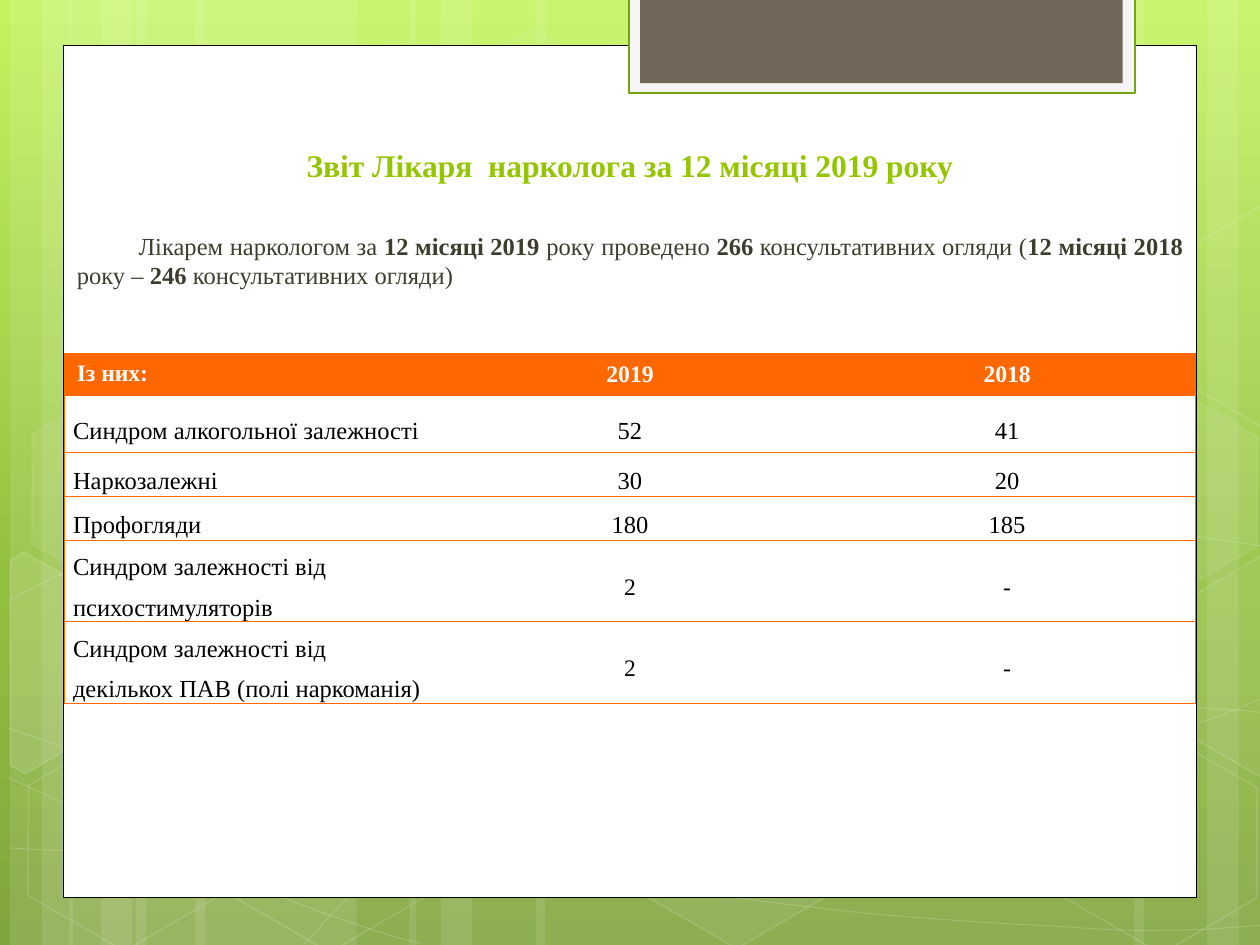
from copy import deepcopy
from math import cos, radians, sin

from lxml import etree
from pptx import Presentation
from pptx.dml.color import RGBColor
from pptx.enum import shapes, text
from pptx.oxml import ns
from pptx.util import Inches, Pt

FONT = "Times New Roman"
COLORS = {
    "white": "FFFFFF", "black": "000000", "title": "94C600", "body": "3E3D2D",
    "orange": "FF6700", "frame": "F5F5F5", "frame_line": "74A510", "tab": "71685A",
    "light_green": "C3F35F", "green": "93BF3F", "dark_green": "81A53E",
}
BACKDROP = [(0, "light_green"), (0.62, "green"), (1, "dark_green")]
TILT = 30

# left, width, rotation of the translucent stripes
STRIPES = [(1.08, 1.75, 0), (0.08, 0.5, 0), (0.33, 0.83, 0), (1.55, 1.75, 0), (0.55, 0.5, 0),
           (0.8, 0.83, 0), (7.33, 1.75, 180), (9.58, 0.5, 180), (9, 0.83, 180),
           (4.25, 3.08, 0), (3.25, 0.5, 0), (3.5, 0.83, 0)]

# start point, then Bezier segments of two control points and an end point
WAVES = [
    [(0.07, 6.73), (0.61, 6.76), (1.15, 6.79), (1.9, 6.78), (2.65, 6.77), (3.58, 6.75),
     (4.58, 6.65), (5.58, 6.55), (7, 6.36), (7.92, 6.17), (8.83, 5.98), (9.77, 5.68),
     (10.07, 5.51)],
    [(0.07, 4.77), (0.36, 4.61), (0.65, 4.46), (1.21, 4.31), (1.78, 4.16), (2.59, 3.94),
     (3.47, 3.87), (4.36, 3.8), (5.44, 3.79), (6.54, 3.87), (7.64, 3.95), (9.47, 4.26),
     (10.07, 4.34)],
    [(0.06, 6.17), (1.27, 6.72), (2.47, 7.27), (3.34, 7.49)],
    [(0.07, 5.78), (0.38, 5.89), (0.7, 6), (1.28, 6.16), (1.86, 6.31), (2.73, 6.56),
     (3.57, 6.73), (4.4, 6.9), (5.45, 7.08), (6.28, 7.18), (7.11, 7.29), (8, 7.33),
     (8.53, 7.36), (9.05, 7.4), (9.19, 7.38), (9.45, 7.38), (9.71, 7.37), (9.89, 7.35),
     (10.07, 7.34)],
    [(2.42, 7.49), (2.6, 7.29), (2.78, 7.09), (3.02, 6.91), (3.26, 6.73), (3.6, 6.53),
     (3.88, 6.39), (4.16, 6.25), (4.33, 6.19), (4.7, 6.09), (5.06, 5.99), (5.73, 5.85),
     (6.08, 5.78), (6.44, 5.71), (6.49, 5.71), (6.8, 5.69), (7.11, 5.66), (7.6, 5.63),
     (7.94, 5.62), (8.29, 5.61), (8.86, 5.62), (8.86, 5.62), (9.08, 5.62), (9.31, 5.62),
     (9.53, 5.62), (9.71, 5.63), (9.88, 5.64), (9.97, 5.65), (10.06, 5.66), (10.03, 5.65),
     (10.06, 5.66)],
]

# left, top, fill opacity, line opacity (percent)
HEXAGONS = [(3.34, 0.36, 4, 8), (4.97, 5.89, 6, 12), (0.11, 5.91, 0, 12), (0.14, 3.12, 7, 8),
            (1.74, 5.92, 0, 12), (7.53, 4.53, 10, 12), (8.34, 5.93, 0, 12), (8.34, 3.14, 7, 8)]

# hexagons cut off by the slide edge: fill opacity, centre, tilted outline
CUT_HEXAGONS = [
    (10, (0.36, 5.35),
     [(0.08, 4.45), (0.19, 4.38), (0.96, 4.82), (0.95, 5.7), (0.2, 6.14), (0.08, 6.07)]),
    (4, (9.85, 5.2),
     [(9.26, 4.85), (10.01, 4.41), (10.09, 4.46), (10.09, 6.13), (10.02, 6.17), (9.26, 5.73)]),
    (0, (9.85, 2.41),
     [(9.26, 2.07), (10.01, 1.63), (10.1, 1.68), (10.09, 3.35), (10.02, 3.39), (9.26, 2.95)]),
]

TITLE = "Звіт Лікаря  нарколога за 12 місяці 2019 року"
SUMMARY = ["Лікарем наркологом за ", "12 місяці 2019 ", "року проведено ", "266",
           " консультативних огляди (", "12 місяці 2018", " року – ", "246 ",
           "консультативних огляди)"]
CASES = [
    ("Із них:", "2019", "2018"),
    ("Синдром алкогольної залежності", "52", "41"),
    ("Наркозалежні", "30", "20"),
    ("Профогляди", "180", "185"),
    ("Синдром залежності від психостимуляторів", "2", "-"),
    ("Синдром залежності від декількох ПАВ (полі наркоманія)", "2", "-"),
]
ROW_HEIGHTS = [0.33, 0.45, 0.35, 0.35, 0.35, 0.35]


def rgb(name):
    return RGBColor.from_string(COLORS[name])


def set_opacity(fill_parent, percent):
    if percent < 100:
        color = fill_parent.find(ns.qn("a:solidFill")).find(ns.qn("a:srgbClr"))
        etree.SubElement(color, ns.qn("a:alpha")).set("val", str(percent * 1000))


def paint(shape, fill=None, line=None, width=1, fill_opacity=100, line_opacity=100):
    """Fill and outline a shape; None leaves that part empty."""
    shape.shadow.inherit = False
    properties = shape._element.spPr
    if fill and fill_opacity:
        shape.fill.solid()
        shape.fill.fore_color.rgb = rgb(fill)
        set_opacity(properties, fill_opacity)
    else:
        shape.fill.background()
    if line:
        shape.line.color.rgb = rgb(line)
        shape.line.width = Pt(width)
        set_opacity(properties.find(ns.qn("a:ln")), line_opacity)
    else:
        shape.line.fill.background()


def add_preset(slide, box, preset=shapes.MSO_SHAPE.RECTANGLE, rotation=0, **look):
    shape = slide.shapes.add_shape(preset, *map(Inches, box))
    shape.rotation = rotation
    paint(shape, **look)
    return shape


def add_outline(slide, points, close, **look):
    corners = [(Inches(x), Inches(y)) for x, y in points]
    builder = slide.shapes.build_freeform(*corners[0])
    builder.add_line_segments(corners[1:], close=close)
    shape = builder.convert_to_shape()
    paint(shape, **look)
    return shape


def add_wave(slide, knots):
    """Draw the knots as an outline, then join each three segments into a Bezier curve."""
    wave = add_outline(slide, knots, False, line="white", width=0.5, line_opacity=20)
    outline = wave._element.find(".//" + ns.qn("a:path"))
    segments = outline.findall(ns.qn("a:lnTo"))
    for i in range(0, len(segments), 3):
        curve = etree.SubElement(outline, ns.qn("a:cubicBezTo"))
        for segment in segments[i:i + 3]:
            curve.append(segment[0])
            outline.remove(segment)


def untilt(point, center):
    dx, dy = point[0] - center[0], point[1] - center[1]
    c, s = cos(radians(TILT)), sin(radians(TILT))
    return center[0] + dx * c + dy * s, center[1] - dx * s + dy * c


def add_backdrop(slide, height):
    for left, width, rotation in STRIPES:
        add_preset(slide, (left, 0, width, height), rotation=rotation,
                   fill="white", fill_opacity=10)
    for knots in WAVES:
        add_wave(slide, knots)
    for left, top, fill_opacity, line_opacity in HEXAGONS:
        hexagon = add_preset(slide, (left, top, 1.75, 1.52), shapes.MSO_SHAPE.HEXAGON, TILT,
                             fill="white", line="white",
                             fill_opacity=fill_opacity, line_opacity=line_opacity)
        hexagon.adjustments[0] = 0.285
    for fill_opacity, center, points in CUT_HEXAGONS:
        upright = [untilt(point, center) for point in points]
        add_outline(slide, upright, True, fill="white", line="white",
                    fill_opacity=fill_opacity, line_opacity=12).rotation = TILT


def add_panel(slide, box):
    """White page with a framed tab hanging over its top edge."""
    left, top, _, _ = box
    add_preset(slide, box, fill="white", line="black", width=0.5)
    add_preset(slide, (left + 4.49, top - 0.38, 4.02, 0.76), fill="frame", line="frame_line",
               width=1.25)
    add_preset(slide, (left + 4.58, top - 0.38, 3.83, 0.68), fill="tab")


def set_background(master):
    fill = master.background.fill
    fill.gradient()
    fill.gradient_angle = 270
    stop_list = master._element.find(".//" + ns.qn("a:gsLst"))
    stop_list.append(deepcopy(stop_list[-1]))
    for stop, (position, color) in zip(fill.gradient_stops, BACKDROP):
        stop.position = position
        stop.color.rgb = rgb(color)


def move_to_master(slide, master):
    """Make every shape but the placeholders part of the master, behind its own parts."""
    decorations = [shape for shape in slide.shapes if not shape.is_placeholder]
    for i, shape in enumerate(decorations):
        shape._element.nvSpPr.cNvPr.set("id", str(100 + i))
        master.shapes._spTree.insert(2 + i, shape._element)


def format_runs(paragraph, size, color, bold=False):
    for run in paragraph.runs:
        run.font.name, run.font.size, run.font.bold = FONT, Pt(size), bold
        run.font.color.rgb = rgb(color)


def place(placeholder, box, anchor):
    placeholder.left, placeholder.top, placeholder.width, placeholder.height = map(Inches, box)
    frame = placeholder.text_frame
    frame.vertical_anchor = anchor
    frame.auto_size = text.MSO_AUTO_SIZE.NONE
    return frame.paragraphs[0]


def add_title(slide, box):
    paragraph = place(slide.shapes.title, box, text.MSO_ANCHOR.BOTTOM)
    paragraph.text = TITLE
    paragraph.alignment = text.PP_ALIGN.CENTER
    format_runs(paragraph, 18, "title", True)


def add_summary(slide, box):
    paragraph = place(slide.placeholders[1], box, text.MSO_ANCHOR.TOP)
    paragraph.alignment = text.PP_ALIGN.JUSTIFY
    paragraph.space_before = Pt(0)
    properties = paragraph._p.get_or_add_pPr()
    properties.set("marL", "0")
    properties.set("indent", str(Inches(0.49)))
    etree.SubElement(properties, ns.qn("a:buNone"))
    for part in SUMMARY:
        paragraph.add_run().text = part
    format_runs(paragraph, 14, "body")
    for run in paragraph.runs[1::2]:
        run.font.bold = True


def set_borders(cell, sides):
    """Orange lines on the given sides (letters of LRTB), none on the others."""
    for side in "LRTB":
        line = etree.SubElement(cell._tc.get_or_add_tcPr(), ns.qn("a:ln" + side), w=str(Pt(0.75)))
        if side in sides:
            fill = etree.SubElement(line, ns.qn("a:solidFill"))
            etree.SubElement(fill, ns.qn("a:srgbClr"), val=COLORS["orange"])
        else:
            etree.SubElement(line, ns.qn("a:noFill"))


def add_cases(slide, box):
    last = len(CASES[0]) - 1
    frame = slide.shapes.add_table(len(CASES), last + 1, *map(Inches, box))
    table = frame.table
    for r, (values, height) in enumerate(zip(CASES, ROW_HEIGHTS)):
        table.rows[r].height = Inches(height)
        for c, value in enumerate(values):
            cell = table.cell(r, c)
            set_borders(cell, "TB" + "L" * (c == 0) + "R" * (c == last))
            cell.text_frame.text = value
            paragraph = cell.text_frame.paragraphs[0]
            if c:
                paragraph.alignment = text.PP_ALIGN.CENTER
            if r or c:
                cell.vertical_anchor = text.MSO_ANCHOR.MIDDLE
            if r:
                cell.fill.background()
                cell.margin_left = cell.margin_right = Inches(0.07)
                cell.margin_top = cell.margin_bottom = 0
                paragraph.line_spacing = 1.5
                format_runs(paragraph, 13.5 if c and r > 3 else 14, "black")
            else:
                cell.fill.solid()
                cell.fill.fore_color.rgb = rgb("orange")
                format_runs(paragraph, 13.5, "white", True)
    frame.height = Inches(box[3])


def main():
    deck = Presentation()
    deck.slide_width, deck.slide_height = Inches(10), Inches(7.5)
    slide = deck.slides.add_slide(deck.slide_layouts[1])
    set_background(deck.slide_master)
    add_backdrop(slide, 7.5)
    add_panel(slide, (0.5, 0.36, 9, 6.76))
    move_to_master(slide, deck.slide_master)
    add_title(slide, (0.51, 0.84, 8.98, 0.67))
    add_summary(slide, (0.51, 1.78, 8.98, 0.92))
    add_cases(slide, (0.51, 2.81, 8.98, 2.89))
    deck.save("out.pptx")


if __name__ == "__main__":
    main()
